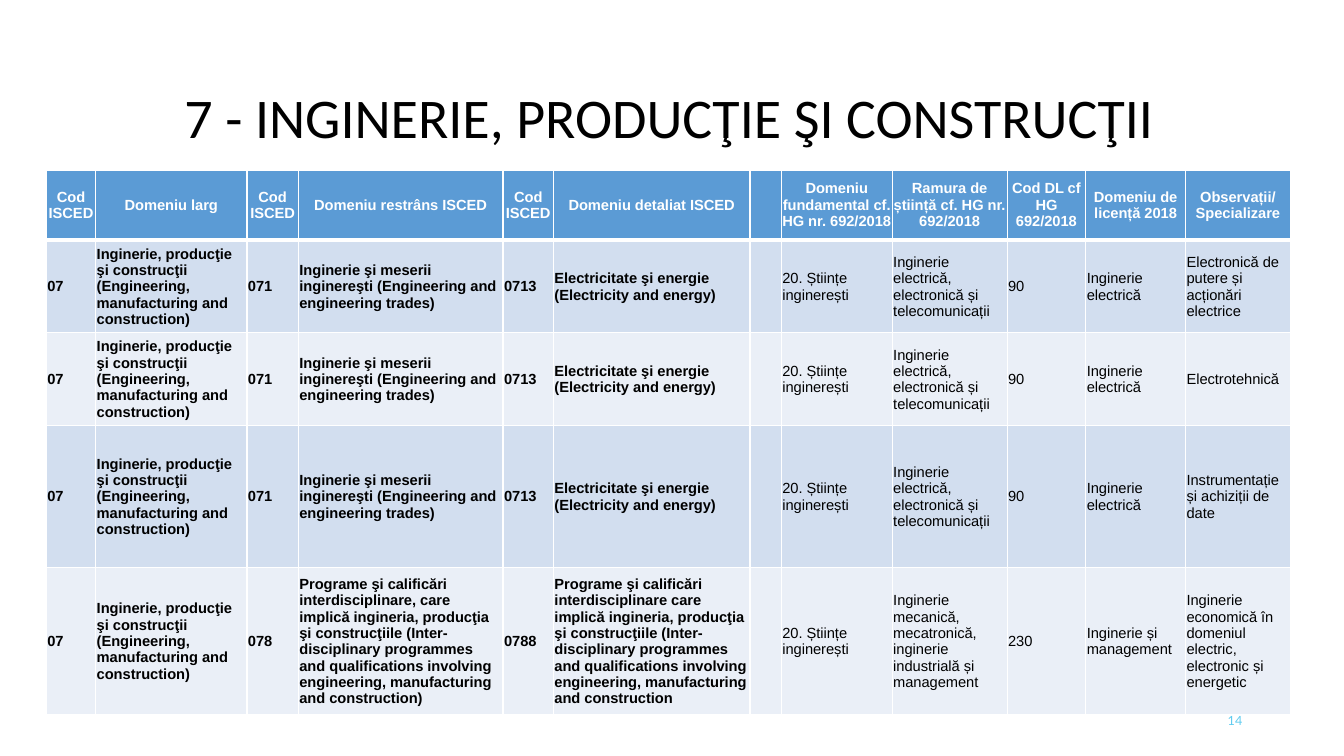
from pptx import Presentation
from pptx.dml.color import RGBColor as Rgb
from pptx.enum.text import MSO_ANCHOR as Anchor, PP_ALIGN as Align
from pptx.oxml import parse_xml
from pptx.oxml.ns import nsdecls
from pptx.util import Inches, Pt

COLORS = {
    "white": "FFFFFF",
    "black": "000000",
    "head": "5B9BD5",
    "odd": "D2DEEF",
    "even": "EAEFF7",
    "page": "5FCBEF",
}

# Table content
WIDTHS = [0.49, 1.5, 0.51, 2.03, 0.5, 1.95, 0.31, 1.1, 1.14, 0.78, 0.99, 1.04]
HEIGHTS = [0.69, 0.92, 0.92, 1.41, 1.46]
CODES = (0, 2, 4)
BOLD = 6  # columns before this one are bold

HEAD = [
    "Cod ISCED", "Domeniu larg", "Cod ISCED", "Domeniu restrâns ISCED",
    "Cod ISCED", "Domeniu detaliat ISCED", "",
    "Domeniu fundamental cf. HG nr. 692/2018",
    "Ramura de știință cf. HG nr. 692/2018", "Cod DL cf HG 692/2018",
    "Domeniu de licență 2018", "Observații/ Specializare",
]
BROAD = ["07", "Inginerie, producţie şi construcţii "
         "(Engineering, manufacturing and construction)"]
BASE = "20. Științe inginerești"
POWER = BROAD + [
    "071", "Inginerie şi meserii inginereşti (Engineering and engineering trades)",
    "0713", "Electricitate şi energie (Electricity and energy)", "", BASE,
    "Inginerie electrică, electronică și telecomunicații", "90",
    "Inginerie electrică",
]
MIXED = BROAD + [
    "078", "Programe şi calificări interdisciplinare, care implică ingineria, "
    "producţia şi construcţiile (Inter-disciplinary programmes and qualifications "
    "involving engineering, manufacturing and construction)",
    "0788", "Programe şi calificări interdisciplinare care implică ingineria, "
    "producţia şi construcţiile (Inter-disciplinary programmes and qualifications "
    "involving engineering, manufacturing and construction", "", BASE,
    "Inginerie mecanică, mecatronică, inginerie industrială și management", "230",
    "Inginerie și management",
]
ROWS = [
    HEAD,
    POWER + ["Electronică de putere și acționări electrice"],
    POWER + ["Electrotehnică"],
    POWER + ["Instrumentație și achiziții de date"],
    MIXED + ["Inginerie economică în domeniul electric, electronic și energetic"],
]


class Deck:
    def __init__(self):
        self.prs = Presentation()
        self.prs.slide_width = Inches(13.33)
        self.prs.slide_height = Inches(7.5)
        self.slide = self.prs.slides.add_slide(self.prs.slide_layouts[6])

    def style(self, para, size, face, color, bold=False, align=Align.LEFT):
        para.alignment = align
        for font in [para.font] + [run.font for run in para.runs]:
            font.size = Pt(size)
            font.name = face
            font.bold = bold
            font.color.rgb = Rgb.from_string(COLORS[color])

    def text(self, box, words, size, face, color, align, space=1.0):
        frame = self.slide.shapes.add_textbox(*map(Inches, box)).text_frame
        frame.word_wrap = True
        frame.vertical_anchor = Anchor.MIDDLE
        frame.text = words
        para = frame.paragraphs[0]
        para.line_spacing = space
        self.style(para, size, face, color, align=align)

    def edges(self, cell, top, bottom):
        props = cell._tc.get_or_add_tcPr()
        for side, width in (("L", 1), ("R", 1), ("T", top), ("B", bottom)):
            props.append(parse_xml(
                f'<a:ln{side} {nsdecls("a")} w="{Pt(width)}"><a:solidFill>'
                f'<a:srgbClr val="{COLORS["white"]}"/></a:solidFill></a:ln{side}>'))

    def cell(self, cell, words, row, col):
        head = row == 0
        self.edges(cell, 3 if row == 1 else 1, 3 if head else 1)
        cell.fill.solid()
        fill = "head" if head else ("even", "odd")[row % 2]
        cell.fill.fore_color.rgb = Rgb.from_string(COLORS[fill])
        cell.vertical_anchor = Anchor.MIDDLE
        inset = Inches(0 if head else 0.01)
        cell.margin_left = cell.margin_right = cell.margin_top = inset
        cell.margin_bottom = 0
        cell.text = words
        align = Align.LEFT
        if head:
            align = Align.CENTER
        elif row > 1 and col in CODES:
            align = Align.JUSTIFY
        self.style(cell.text_frame.paragraphs[0], 10.5, "Arial",
                   "white" if head else "black", head or col < BOLD, align)

    def table(self, left, top, rows, widths, heights):
        box = (left, top, sum(widths), sum(heights))
        table = self.slide.shapes.add_table(
            len(rows), len(widths), *map(Inches, box)).table
        for col, width in zip(table.columns, widths):
            col.width = Inches(width)
        for line, height in zip(table.rows, heights):
            line.height = Inches(height)
        for row, items in enumerate(rows):
            for col, words in enumerate(items):
                self.cell(table.cell(row, col), words, row, col)


def main():
    deck = Deck()
    # Title
    deck.text((0.68, 0.83, 11.91, 0.72), "7 - INGINERIE, PRODUCŢIE ŞI CONSTRUCŢII",
              40, "Calibri", "black", Align.CENTER, 0.9)
    # Table of fields
    deck.table(0.46, 1.69, ROWS, WIDTHS, HEIGHTS)
    # Page number
    deck.text((9.42, 6.95, 3, 0.4), "14", 9, "Lato", "page", Align.RIGHT)
    deck.prs.save("out.pptx")


if __name__ == "__main__":
    main()
